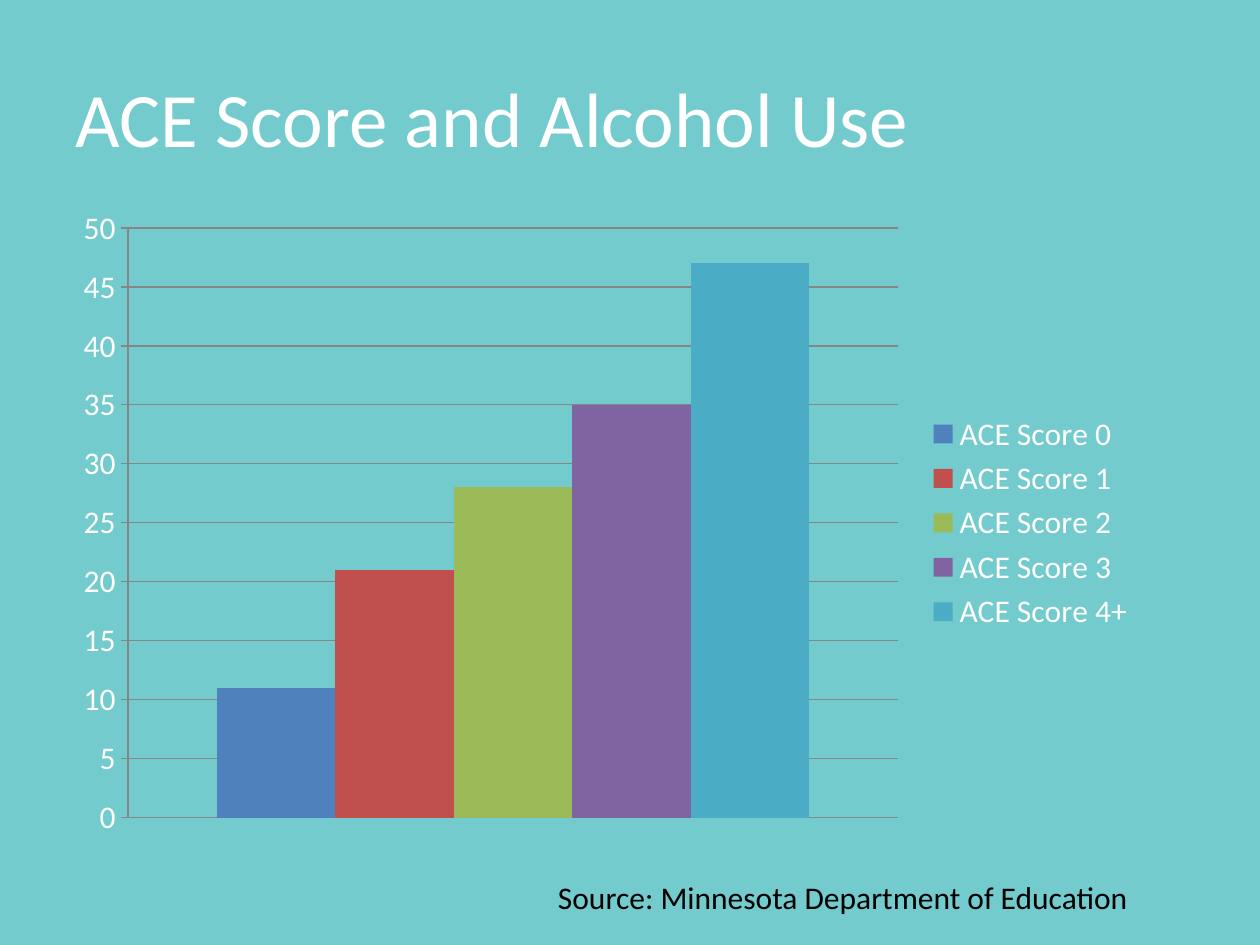
import pptx
import pptx.chart.data
import pptx.dml.color
import pptx.enum.chart
import pptx.enum.text
import pptx.oxml
import pptx.oxml.ns
import pptx.util

RGBColor = pptx.dml.color.RGBColor
TEAL = RGBColor(0x73, 0xCB, 0xCD)
WHITE = RGBColor(0xFF, 0xFF, 0xFF)
BLACK = RGBColor(0, 0, 0)
GREY = RGBColor(0x86, 0x86, 0x86)
BLUE = RGBColor(0x4F, 0x81, 0xBD)
RED = RGBColor(0xC0, 0x50, 0x4D)
GREEN = RGBColor(0x9B, 0xBB, 0x59)
PURPLE = RGBColor(0x80, 0x64, 0xA2)
AQUA = RGBColor(0x4B, 0xAC, 0xC6)

FONT = "Calibri"
WIDTH = pptx.util.Inches(10)
HEIGHT = pptx.util.Inches(7.5)
MARGIN = 0.5

ALCOHOL_USE = [
    ("ACE Score 0", 11, BLUE),
    ("ACE Score 1", 21, RED),
    ("ACE Score 2", 28, GREEN),
    ("ACE Score 3", 35, PURPLE),
    ("ACE Score 4+", 47, AQUA),
]
PLOT_SHARES = {"x": 0.06, "y": 0.05, "w": 0.71, "h": 0.9}


def box(left, top, width, height):
    return [pptx.util.Inches(length) for length in (left, top, width, height)]


def style_font(font, size, color):
    font.name = FONT
    font.size = pptx.util.Pt(size)
    font.color.rgb = color


def add_text(slide, area, text, size, color, anchor, wrap=True):
    label = slide.shapes.add_textbox(*area)
    frame = label.text_frame
    frame.word_wrap = wrap
    frame.vertical_anchor = anchor
    frame.text = text
    style_font(frame.paragraphs[0].runs[0].font, size, color)
    return frame


def place_plot(chart):
    qn = pptx.oxml.ns.qn
    plot_area = chart.element.find(".//" + qn("c:plotArea"))
    for automatic in plot_area.findall(qn("c:layout")):
        plot_area.remove(automatic)
    modes = "".join(f'<c:{axis}Mode val="edge"/>' for axis in "xy")
    shares = "".join(f'<c:{side} val="{share}"/>' for side, share in PLOT_SHARES.items())
    plot_area.insert(0, pptx.oxml.parse_xml(
        f'<c:layout {pptx.oxml.ns.nsdecls("c")}><c:manualLayout>'
        f'<c:layoutTarget val="inner"/>{modes}{shares}'
        '</c:manualLayout></c:layout>'))


def style_score_axis(axis):
    axis.minimum_scale = 0
    axis.maximum_scale = 50
    axis.major_unit = 5
    axis.major_tick_mark = pptx.enum.chart.XL_TICK_MARK.OUTSIDE
    axis.has_major_gridlines = True
    for line in (axis.format.line, axis.major_gridlines.format.line):
        line.color.rgb = GREY
        line.width = pptx.util.Pt(0.75)


def add_use_chart(slide, area):
    use_data = pptx.chart.data.CategoryChartData()
    use_data.categories = ["1"]
    for score, percent, _ in ALCOHOL_USE:
        use_data.add_series(score, [percent])
    chart = slide.shapes.add_chart(
        pptx.enum.chart.XL_CHART_TYPE.COLUMN_CLUSTERED, *area, use_data).chart
    style_font(chart.font, 18, WHITE)
    chart.has_title = False
    chart.has_legend = True
    chart.legend.position = pptx.enum.chart.XL_LEGEND_POSITION.RIGHT
    chart.legend.include_in_layout = False
    chart.category_axis.visible = False
    style_score_axis(chart.value_axis)
    columns = chart.plots[0]
    columns.gap_width = 150
    columns.overlap = 0
    columns.vary_by_categories = False
    for series, (_, _, color) in zip(columns.series, ALCOHOL_USE):
        series.format.fill.solid()
        series.format.fill.fore_color.rgb = color
    place_plot(chart)


def main():
    deck = pptx.Presentation()
    deck.slide_width = WIDTH
    deck.slide_height = HEIGHT
    slide = deck.slides.add_slide(deck.slide_layouts[6])
    slide.background.fill.solid()
    slide.background.fill.fore_color.rgb = TEAL

    anchors = pptx.enum.text.MSO_ANCHOR
    add_text(slide, box(MARGIN, 0.3, 10 - 2 * MARGIN, 1.25),
             "ACE Score and Alcohol Use", 44, WHITE, anchors.MIDDLE)
    add_use_chart(slide, box(MARGIN, 1.55, 8.61, 5.2))
    source = add_text(slide, box(4.33, 6.92, 4.78, 0.4),
                      "Source: Minnesota Department of Education",
                      18, BLACK, anchors.TOP, wrap=False)
    source.auto_size = pptx.enum.text.MSO_AUTO_SIZE.SHAPE_TO_FIT_TEXT
    deck.save("out.pptx")


if __name__ == "__main__":
    main()
